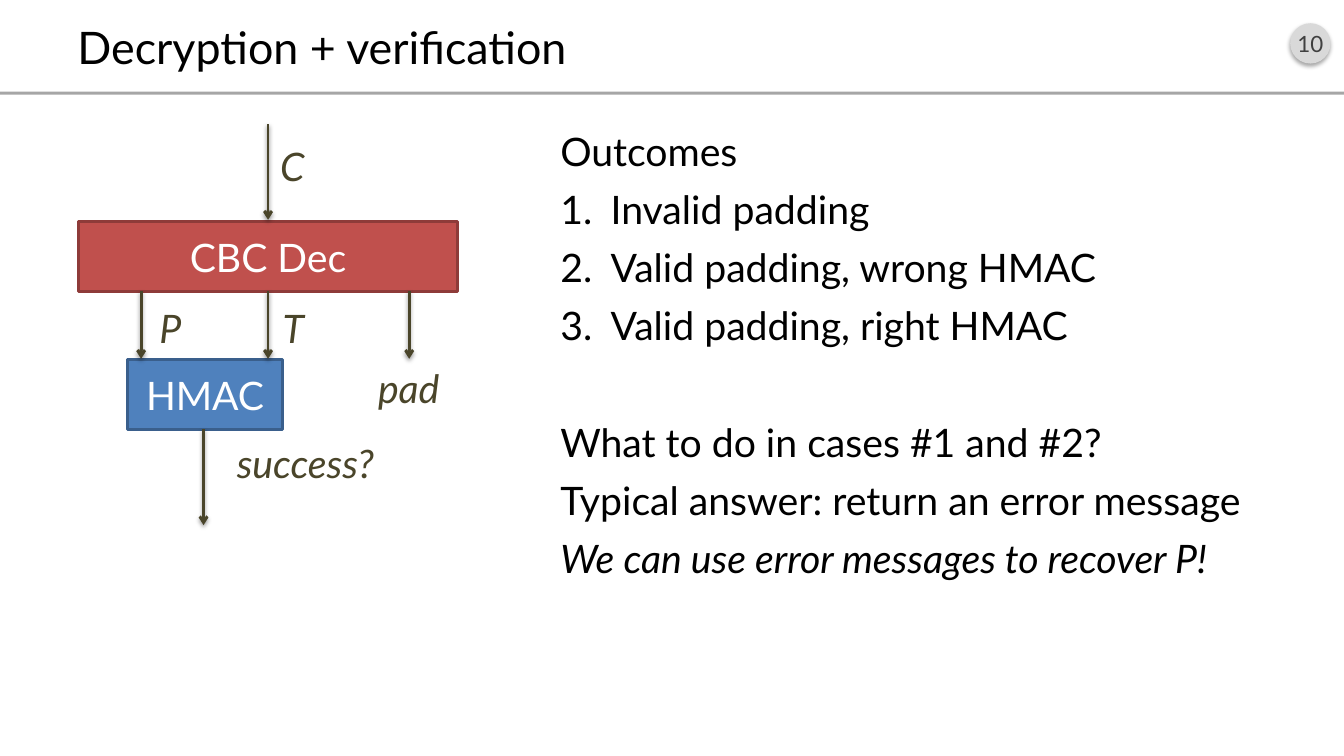
from dataclasses import dataclass

from lxml.etree import SubElement
from pptx import Presentation
from pptx.dml.color import RGBColor
from pptx.enum.shapes import MSO_CONNECTOR as Connector, MSO_SHAPE as Preset
from pptx.enum.text import MSO_ANCHOR as Anchor, PP_ALIGN as Align
from pptx.oxml.ns import qn
from pptx.util import Pt

COLORS = {
    "black": "000000", "white": "FFFFFF", "olive": "4A452A",
    "rule": "A6A6A6", "badge": "D9D9D9", "badge_text": "404040",
    "red": "C0504D", "red_edge": "8E3B39",
    "blue": "4F81BD", "blue_edge": "3A5F8C",
}
FONT = "Lato"
BODY_SIZE = 28
LINE_HEIGHT = 33.6
SPACE_BEFORE = 8
NUMBER_INDENT = 36


@dataclass
class Box:
    left: float
    top: float
    width: float
    height: float


@dataclass
class Stage:
    text: str
    box: Box
    fill: str
    edge: str


@dataclass
class Label:
    text: str
    box: Box


@dataclass
class Arrow:
    x: float
    top: float
    bottom: float


@dataclass
class Line:
    text: str
    numbered: bool = False
    italic: bool = False
    space_before: float = SPACE_BEFORE


STAGES = [
    Stage("CBC Dec", Box(56, 158.4, 271, 49.7), "red", "red_edge"),
    Stage("HMAC", Box(91.4, 257, 110.2, 49.7), "blue", "blue_edge"),
]
LABELS = [
    Label("C", Box(183.6, 97.9, 50.4, 44.6)),
    Label("P", Box(96.5, 213.8, 50.4, 44.6)),
    Label("T", Box(184.3, 213.8, 50.4, 44.6)),
    Label("pad", Box(259.2, 256.3, 65.5, 44.6)),
    Label("success?", Box(159.1, 310.3, 118.1, 41)),
]
ARROWS = [Arrow(191.5, 88.6, 157), Arrow(145.4, 306.7, 375.1)]
ARROWS += [Arrow(x, 208, 256.3) for x in (100.8, 191.5, 292.3)]
OUTCOMES = [
    Line("Outcomes"),
    Line("Invalid padding", numbered=True),
    Line("Valid padding, wrong HMAC", numbered=True),
    Line("Valid padding, right HMAC", numbered=True),
    Line("What to do in cases #1 and #2?",
         space_before=LINE_HEIGHT + 2 * SPACE_BEFORE),
    Line("Typical answer: return an error message"),
    Line("We can use error messages to recover P!", italic=True),
]


def rgb(name: str) -> RGBColor:
    return RGBColor.from_string(COLORS[name])


def points(box: Box) -> list:
    return [Pt(v) for v in (box.left, box.top, box.width, box.height)]


def set_font(paragraph, size: float, color: str, italic: bool = False) -> None:
    font = paragraph.font
    font.name, font.size, font.italic = FONT, Pt(size), italic
    font.color.rgb = rgb(color)


def add_shadow(effects, opacity: int, distance: float) -> None:
    shadow = SubElement(effects, qn("a:outerShdw"), blurRad=str(Pt(3.1)),
                        dist=str(Pt(distance)), dir="5400000", rotWithShape="0")
    black = SubElement(shadow, qn("a:srgbClr"), val=COLORS["black"])
    SubElement(black, qn("a:alpha"), val=str(opacity * 1000))


def add_filled(slide, preset: Preset, box: Box, fill: str, edge: str = ""):
    shape = slide.shapes.add_shape(preset, *points(box))
    shape.shadow.inherit = False
    shape.fill.solid()
    shape.fill.fore_color.rgb = rgb(fill)
    if edge:
        shape.line.color.rgb = rgb(edge)
        shape.line.width = Pt(2)
    else:
        shape.line.fill.background()
    return shape


def write_centred(shape, text: str, size: float, color: str,
                  italic: bool = False) -> None:
    paragraph = shape.text_frame.paragraphs[0]
    paragraph.text = text
    paragraph.alignment = Align.CENTER
    set_font(paragraph, size, color, italic)


def add_text_area(slide, box: Box):
    area = slide.shapes.add_textbox(*points(box))
    area.text_frame.word_wrap = True
    return area


def add_label(slide, label: Label) -> None:
    area = add_text_area(slide, label.box)
    write_centred(area, label.text, BODY_SIZE, "olive", italic=True)


def add_stage(slide, stage: Stage) -> None:
    block = add_filled(slide, Preset.RECTANGLE, stage.box, stage.fill, stage.edge)
    block.text_frame.vertical_anchor = Anchor.MIDDLE
    write_centred(block, stage.text, BODY_SIZE, "white")


def add_arrow(slide, arrow: Arrow) -> None:
    x = Pt(arrow.x)
    flow = slide.shapes.add_connector(
        Connector.STRAIGHT, x, Pt(arrow.top), x, Pt(arrow.bottom))
    flow.line.color.rgb = rgb("olive")
    flow.line.width = Pt(2)
    properties = flow.element.spPr
    SubElement(properties.find(qn("a:ln")), qn("a:tailEnd"), type="arrow")
    add_shadow(SubElement(properties, qn("a:effectLst")), 38, 1.6)


def add_outcomes(slide, lines: list[Line], box: Box) -> None:
    frame = add_text_area(slide, box).text_frame
    for i, line in enumerate(lines):
        paragraph = frame.add_paragraph() if i else frame.paragraphs[0]
        paragraph.text = line.text
        paragraph.space_before = Pt(line.space_before)
        if line.numbered:
            properties = paragraph._p.get_or_add_pPr()
            properties.set("marL", str(Pt(NUMBER_INDENT)))
            properties.set("indent", str(-Pt(NUMBER_INDENT)))
            SubElement(properties, qn("a:buAutoNum"), type="arabicPeriod")
        set_font(paragraph, BODY_SIZE, "black", line.italic)


def main() -> None:
    deck = Presentation()
    deck.slide_width, deck.slide_height = Pt(960), Pt(540)
    slide = deck.slides.add_slide(deck.slide_layouts[6])

    # Page number and header rule
    badge = add_filled(slide, Preset.OVAL, Box(921.6, 16.6, 28.8, 28.8), "badge")
    add_shadow(badge.element.spPr.find(qn("a:effectLst")), 35, 1.8)
    badge.text_frame.margin_left = badge.text_frame.margin_right = 0
    badge.text_frame.vertical_anchor = Anchor.MIDDLE
    write_centred(badge, "10", 16, "badge_text")
    add_filled(slide, Preset.RECTANGLE, Box(0, 65.5, 960, 2.2), "rule")

    # Title
    title = add_text_area(slide, Box(48.2, 11.5, 864, 43.2)).text_frame
    title.vertical_anchor = Anchor.MIDDLE
    title.text = "Decryption + verification"
    set_font(title.paragraphs[0], 32, "black")

    # Outcomes
    add_outcomes(slide, OUTCOMES, Box(393.1, 87.1, 519.1, 414))

    # Decryption flow
    for stage in STAGES:
        add_stage(slide, stage)
    for arrow in ARROWS:
        add_arrow(slide, arrow)
    for label in LABELS:
        add_label(slide, label)

    deck.save("out.pptx")


if __name__ == "__main__":
    main()
